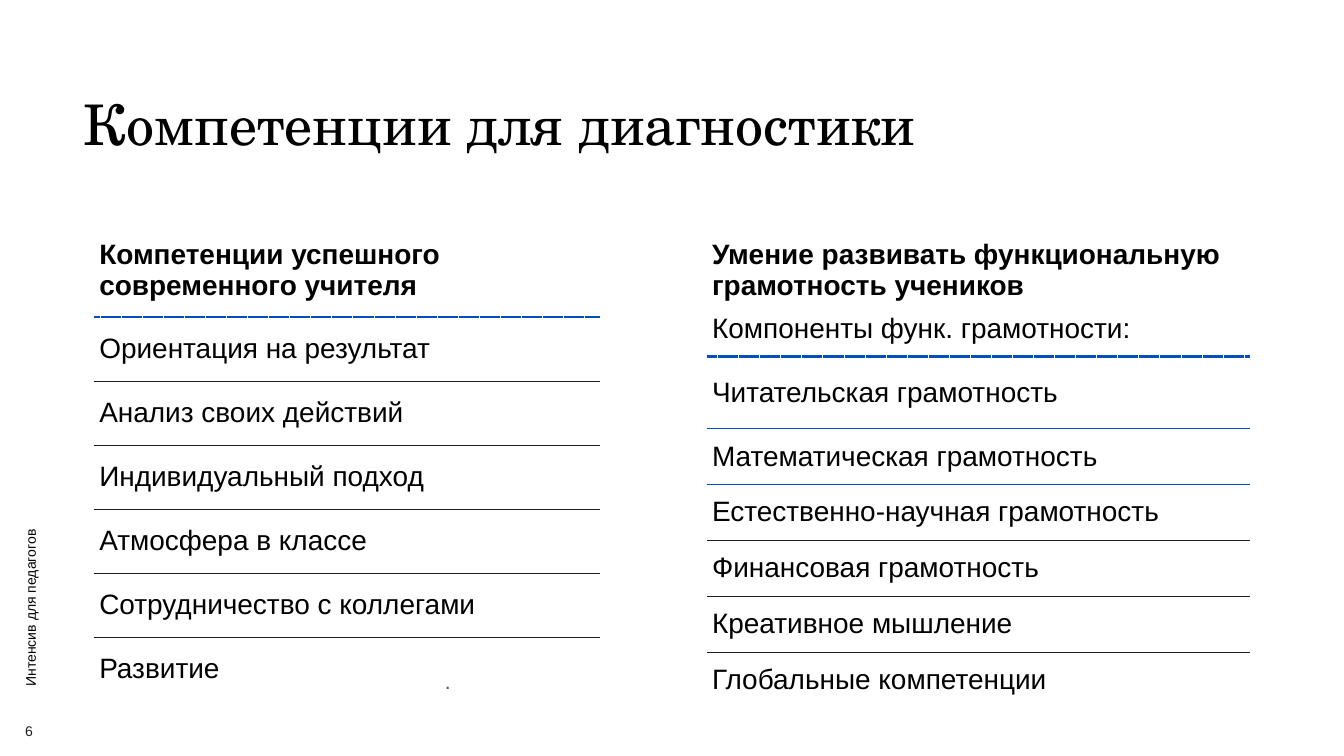
from lxml import etree
from pptx import Presentation
from pptx.dml.color import RGBColor
from pptx.enum.text import MSO_ANCHOR, PP_ALIGN
from pptx.oxml.ns import qn
from pptx.util import Inches, Pt

TOP, MIDDLE = MSO_ANCHOR.TOP, MSO_ANCHOR.MIDDLE
LEFT, CENTER = PP_ALIGN.LEFT, PP_ALIGN.CENTER

BLACK = RGBColor(0x00, 0x00, 0x00)
INK = RGBColor(0x20, 0x1E, 0x1C)
GRAY = RGBColor(0x59, 0x59, 0x59)
BLUE = RGBColor(0x00, 0x4E, 0xC0)

BODY_FONT = "Arial"
TITLE_FONT = "TeX Gyre Schola"

# Rules between table rows: colour, width in points, dash
THIN_INK = (INK, 1, "solid")
THIN_BLUE = (BLUE, 1, "solid")
DOTTED_BLUE = (BLUE, 4.5, "sysDot")

TEACHER_SKILLS = [
    "Ориентация на результат",
    "Анализ своих действий",
    "Индивидуальный подход",
    "Атмосфера в классе",
    "Сотрудничество с коллегами",
    "Развитие",
]
LITERACY_PARTS = [
    "Компоненты функ. грамотности:\u00a0",
    "Читательская грамотность",
    "Математическая грамотность",
    "Естественно-научная грамотность",
    "Финансовая грамотность",
    "Креативное мышление",
    "Глобальные компетенции",
]


def write(frame, text, size, color=BLACK, font=BODY_FONT, bold=False, align=LEFT):
    paragraph = frame.paragraphs[0]
    paragraph.alignment = align
    run = paragraph.add_run()
    run.text = text
    looks = {"name": font, "size": Pt(size), "bold": bold}
    for key, value in looks.items():
        setattr(run.font, key, value)
    run.font.color.rgb = color
    return paragraph


def place(shape, box):
    for side, length in zip(("left", "top", "width", "height"), box):
        setattr(shape, side, Inches(length))


def add_label(slide, box, text, size, color, inset=None, wrap=True, align=LEFT):
    label = slide.shapes.add_textbox(*map(Inches, box))
    frame = label.text_frame
    frame.word_wrap = wrap
    if inset is not None:
        for side in ("left", "top", "right", "bottom"):
            setattr(frame, f"margin_{side}", Inches(inset))
    return label, write(frame, text, size, color, align=align)


def set_border(cell, tag, rule):
    """Draw one side of a cell, or clear it when rule is None."""
    line = etree.SubElement(cell._tc.get_or_add_tcPr(), qn(tag))
    if rule is None:
        etree.SubElement(line, qn("a:noFill"))
        return
    color, width, dash = rule
    line.set("w", str(Pt(width)))
    fill = etree.SubElement(line, qn("a:solidFill"))
    etree.SubElement(fill, qn("a:srgbClr"), val=str(color))
    etree.SubElement(line, qn("a:prstDash"), val=dash)


def add_column_table(slide, box, texts, row_heights, rules, bold=False):
    """One-column table; rules holds the line above each row and below the last."""
    table = slide.shapes.add_table(len(texts), 1, *map(Inches, box)).table
    table.first_row = table.horz_banding = False
    for index, (text, height) in enumerate(zip(texts, row_heights)):
        table.rows[index].height = Inches(height)
        cell = table.cell(index, 0)
        cell.vertical_anchor = MIDDLE
        write(cell.text_frame, text, 40, bold=bold)
        sides = {"a:lnL": None, "a:lnR": None,
                 "a:lnT": rules[index], "a:lnB": rules[index + 1]}
        for tag, rule in sides.items():
            set_border(cell, tag, rule)
        cell.fill.background()


def add_heading(slide, box, text, underline=None):
    add_column_table(slide, box, [text], [box[3]], [None, underline], bold=True)


def add_teacher_column(slide, left, top, width):
    heading_height, row_height = 1.86, 1.27
    count = len(TEACHER_SKILLS)
    add_column_table(
        slide, (left, top + heading_height, width, row_height * count),
        TEACHER_SKILLS, [row_height] * count,
        [DOTTED_BLUE] + [THIN_INK] * (count - 1) + [None])
    add_heading(slide, (left, top, width, heading_height),
                "Компетенции успешного современного учителя", DOTTED_BLUE)


def add_literacy_column(slide, left, top, width):
    heights = [1.11, 1.42] + [1.11] * (len(LITERACY_PARTS) - 2)
    rules = [None, DOTTED_BLUE, THIN_BLUE, THIN_BLUE] + [THIN_INK] * 3 + [None]
    add_column_table(slide, (left, top + 1.54, width, sum(heights)),
                     LITERACY_PARTS, heights, rules)
    add_heading(slide, (left, top, width, 1.86),
                "Умение развивать функциональную грамотность учеников")


def add_title(slide, box):
    title = slide.shapes.title
    place(title, box)
    title.text_frame.vertical_anchor = TOP
    write(title.text_frame, "Компетенции для диагностики", 80, font=TITLE_FONT)


def add_margin_notes(slide):
    course, _ = add_label(slide, (-6.06, 6.84, 13.33, 0.44),
                          "Интенсив для педагогов", 20, BLACK)
    course.rotation = 270
    add_label(slide, (0.36, 14.27, 0.43, 0.42), "6", 20, INK,
              inset=0.06, wrap=False, align=CENTER)
    _, dot = add_label(slide, (8.77, 13.15, 0.67, 0.59), ".", 30, GRAY, inset=0.06)
    dot.line_spacing = 1.1
    dot.space_before = Pt(40)


def main():
    deck = Presentation()
    deck.slide_width, deck.slide_height = Inches(26.67), Inches(15)
    title_only = deck.slide_layouts[5]
    slide = deck.slides.add_slide(title_only)
    add_margin_notes(slide)
    add_title(slide, (1.55, 1.73, 16.98, 2.73))
    add_teacher_column(slide, 1.87, 4.43, 10.03)
    add_literacy_column(slide, 14.03, 4.43, 10.77)
    deck.save("out.pptx")


if __name__ == "__main__":
    main()
